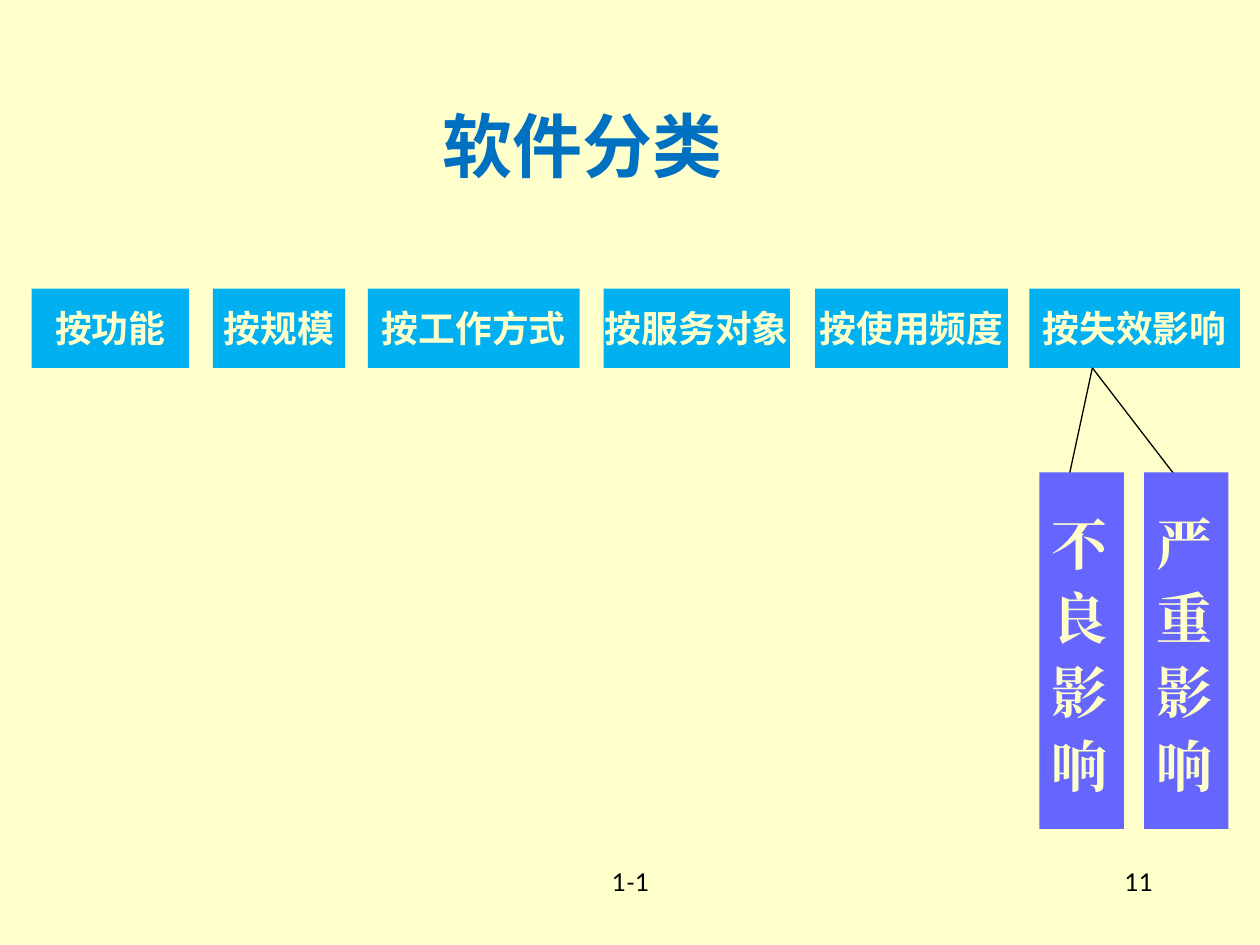
"""Build a slide that classifies software by six criteria."""
from lxml.etree import SubElement
from pptx import Presentation
from pptx.dml.color import RGBColor
from pptx.enum.shapes import MSO_CONNECTOR, MSO_SHAPE
from pptx.enum.text import MSO_ANCHOR, PP_ALIGN
from pptx.oxml.ns import qn
from pptx.util import Inches, Pt

COLORS = {"page": "FFFFCC", "title": "0070C0", "criterion": "00B0F0",
          "effect": "6666FF", "ink": "000000"}
SANS, SERIF, FOOTER = "Noto Sans CJK SC", "Times New Roman", "Lato"

TITLE = "软件分类"
CRITERIA = [("按功能", 0.25, 1.25), ("按规模", 1.69, 1.05),
            ("按工作方式", 2.92, 1.68), ("按服务对象", 4.79, 1.48),
            ("按使用频度", 6.47, 1.53), ("按失效影响", 8.17, 1.67)]
CRITERIA_TOP, CRITERIA_HEIGHT = 2.29, 0.63
EFFECTS = ["不良影响", "严重影响"]
EFFECT_LEFT, EFFECT_STEP, EFFECT_TOP = 8.25, 0.83, 3.75
EFFECT_WIDTH, EFFECT_HEIGHT = 0.67, 2.83
BRANCH_START = (8.67, CRITERIA_TOP + CRITERIA_HEIGHT)
BRANCH_ENDS = [(8.42, 4.08), (9.5, 4)]
FOOTERS = [("1-1", 3.42, 3.17, PP_ALIGN.CENTER),
           ("11", 7.17, 2.08, PP_ALIGN.RIGHT)]


def rgb(name):
    return RGBColor.from_string(COLORS[name])


def write(shape, lines, font, size, color, align, bold=True, spacing=None):
    frame = shape.text_frame
    for index, line in enumerate(lines):
        para = frame.paragraphs[0] if index == 0 else frame.add_paragraph()
        para.alignment = align
        if spacing:
            para.line_spacing = spacing
        span = para.add_run()
        span.text = line
        span.font.name = font
        span.font.size = Pt(size)
        span.font.bold = bold
        span.font.color.rgb = rgb(color)
        east_asian = SubElement(span.font._element, qn("a:ea"))
        east_asian.set("typeface", font)


def add_box(page, left, top, width, height, fill):
    box = page.shapes.add_shape(MSO_SHAPE.RECTANGLE, Inches(left), Inches(top),
                                Inches(width), Inches(height))
    box.shadow.inherit = False
    box.fill.solid()
    box.fill.fore_color.rgb = rgb(fill)
    box.line.fill.background()
    box.text_frame.word_wrap = False
    box.text_frame.vertical_anchor = MSO_ANCHOR.MIDDLE
    return box


def add_arrow(page, start, end):
    arrow = page.shapes.add_connector(
        MSO_CONNECTOR.STRAIGHT, *(Inches(value) for value in start + end))
    arrow.line.color.rgb = rgb("ink")
    arrow.line.width = Pt(0.75)
    SubElement(arrow.line._get_or_add_ln(), qn("a:tailEnd")).set("type", "triangle")
    SubElement(arrow._element.spPr, qn("a:effectLst"))


def main():
    deck = Presentation()
    deck.slide_width, deck.slide_height = Inches(10), Inches(7.5)
    page = deck.slides.add_slide(deck.slide_layouts[5])
    page.background.fill.solid()
    page.background.fill.fore_color.rgb = rgb("page")

    title = page.shapes.title
    title.left, title.top = Inches(2.56), Inches(0.76)
    title.width, title.height = Inches(4.13), Inches(0.77)
    title.text_frame.vertical_anchor = MSO_ANCHOR.MIDDLE
    write(title, [TITLE], SANS, 40, "title", PP_ALIGN.CENTER)

    for label, left, width, align in FOOTERS:
        box = page.shapes.add_textbox(Inches(left), Inches(6.83),
                                      Inches(width), Inches(0.5))
        box.text_frame.word_wrap = True
        write(box, [label], FOOTER, 14, "ink", align, bold=False)

    for label, left, width in CRITERIA:
        box = add_box(page, left, CRITERIA_TOP, width, CRITERIA_HEIGHT, "criterion")
        write(box, [label], SANS, 21, "page", PP_ALIGN.CENTER)

    for end in BRANCH_ENDS:
        add_arrow(page, BRANCH_START, end)

    for index, label in enumerate(EFFECTS):
        box = add_box(page, EFFECT_LEFT + index * EFFECT_STEP, EFFECT_TOP,
                      EFFECT_WIDTH, EFFECT_HEIGHT, "effect")
        write(box, label, SERIF, 32, "page", PP_ALIGN.LEFT, spacing=1.1)

    deck.save("out.pptx")


if __name__ == "__main__":
    main()
